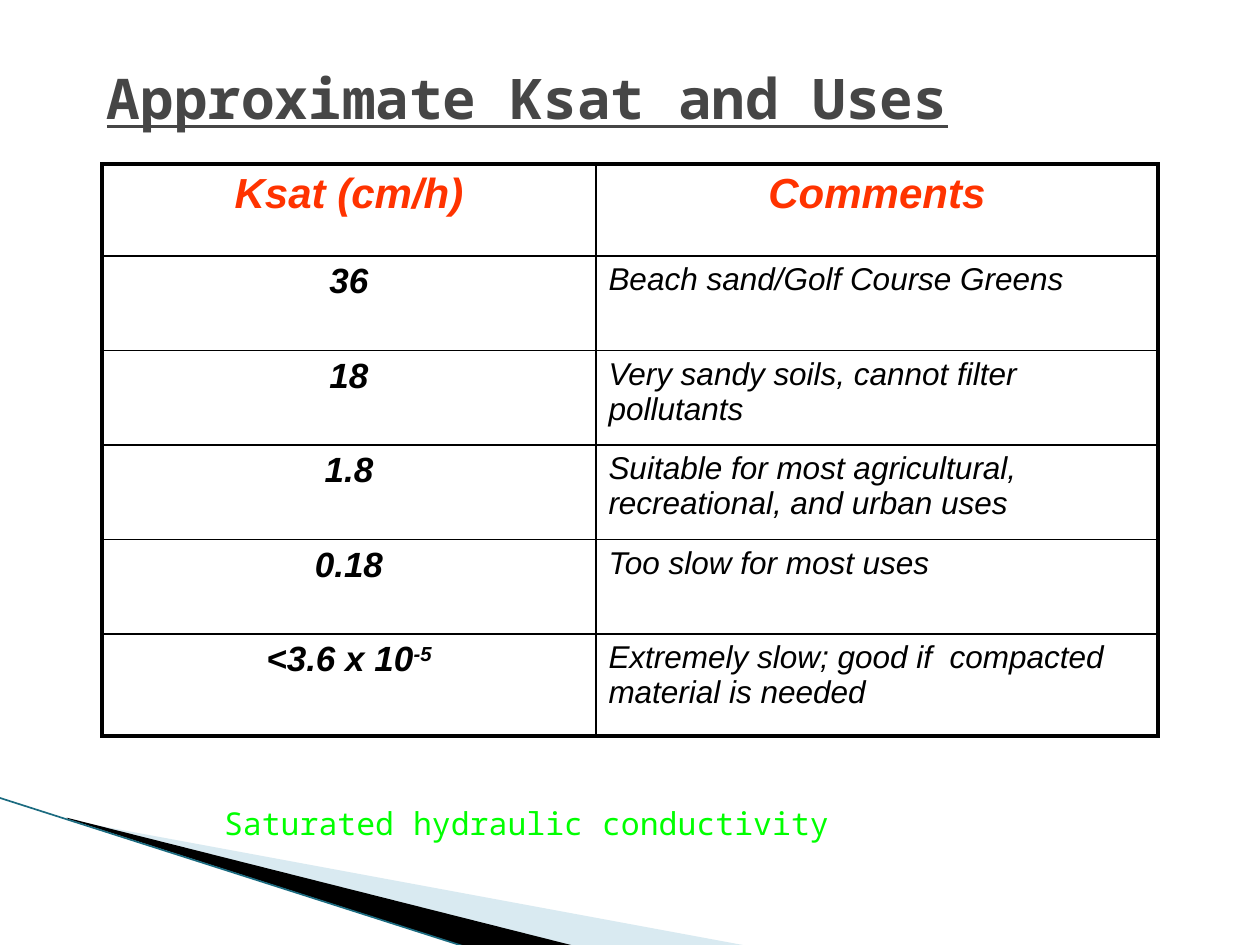
from lxml import etree
from pptx import Presentation
from pptx.dml.color import RGBColor
from pptx.enum.shapes import MSO_CONNECTOR
from pptx.enum.text import MSO_ANCHOR, PP_ALIGN
from pptx.oxml.ns import qn
from pptx.util import Inches, Pt

MONO, SANS = "Noto Sans Mono", "Arial"


def rgb(color):
    return RGBColor.from_string(color)


def add_run(p, text, size, font, color, bold=False, italic=False):
    r = p.add_run()
    r.text = text
    f = r.font
    f.size, f.name, f.bold, f.italic = Pt(size), font, bold, italic
    f.color.rgb = rgb(color)
    return r


prs = Presentation()
prs.slide_width, prs.slide_height = Inches(10), Inches(7.5)
s = prs.slides.add_slide(prs.slide_layouts[6])

# Corner wedges and their edge line
wedges = [
    ("A0CBDC", 40, [(0.55, 6.51), (5.95, 7.51), (4.56, 7.51), (0.55, 6.5)]),
    ("000000", 100, [(0.53, 6.49), (4.57, 7.51), (3.72, 7.52), (0.54, 6.5)]),
]
for color, opacity, corners in wedges:
    points = [(Inches(x), Inches(y)) for x, y in corners]
    fb = s.shapes.build_freeform(*points[0])
    fb.add_line_segments(points[1:], close=True)
    sp = fb.convert_to_shape()
    sp.shadow.inherit = False
    sp.line.fill.background()
    sp.fill.solid()
    sp.fill.fore_color.rgb = rgb(color)
    if opacity < 100:
        clr = sp.fill._xPr.find(f"{qn('a:solidFill')}/{qn('a:srgbClr')}")
        etree.SubElement(clr, qn("a:alpha"), val=str(opacity * 1000))

edge = s.shapes.add_connector(MSO_CONNECTOR.STRAIGHT, Inches(-0.01), Inches(6.33),
                              Inches(3.71), Inches(7.52))
edge.line.color.rgb = rgb("1B6B80")
edge.line.width = Pt(0.95)
etree.SubElement(edge._element.spPr, qn("a:effectLst"))

# Title
title = s.shapes.add_textbox(Inches(0.75), Inches(0.41), Inches(8.5), Inches(0.72))
tf = title.text_frame
tf.word_wrap = True
tf.vertical_anchor = MSO_ANCHOR.MIDDLE
r = add_run(tf.paragraphs[0], "Approximate Ksat and Uses", 32, MONO, "464646", bold=True)
r.font.underline = True

# Table: each row is conductivity, exponent, comment
rows = [
    ("Ksat (cm/h)", "", "Comments"),
    ("36", "", "Beach sand/Golf Course Greens"),
    ("18", "", "Very sandy soils, cannot filter pollutants"),
    ("1.8", "", "Suitable for most agricultural, recreational, and urban uses"),
    ("0.18", "", "Too slow for most uses"),
    ("<3.6 x 10", "-5", "Extremely slow; good if  compacted material is needed"),
]
col_widths = [3.92, 4.46]
row_heights = [0.73] + [0.75] * 4 + [0.81]
last_row, last_col = len(rows) - 1, len(col_widths) - 1
table = s.shapes.add_table(len(rows), len(col_widths), Inches(0.81), Inches(1.3),
                           Inches(sum(col_widths)), Inches(sum(row_heights))).table
for col, width in zip(table.columns, col_widths):
    col.width = Inches(width)
for row, height in zip(table.rows, row_heights):
    row.height = Inches(height)

for i, (ksat, exponent, comment) in enumerate(rows):
    for j, text in enumerate((ksat, comment)):
        cell = table.cell(i, j)
        p = cell.text_frame.paragraphs[0]
        header = i == 0
        p.alignment = PP_ALIGN.CENTER if header or j == 0 else PP_ALIGN.LEFT
        size = 24 if header else (20, 18)[j]
        style = (size, SANS, "FF3300" if header else "000000", header or j == 0, True)
        add_run(p, text, *style)
        if j == 0 and exponent:
            r = add_run(p, exponent, *style)
            r._r.get_or_add_rPr().set("baseline", "30000")

        # Heavy outer frame, thin inner rules; borders go before the fill
        tcPr = cell._tc.get_or_add_tcPr()
        outer = {"L": j == 0, "R": j == last_col, "T": i == 0, "B": i == last_row}
        for side, heavy in outer.items():
            ln = etree.SubElement(tcPr, qn(f"a:ln{side}"), w=str(Pt(2.25 if heavy else 1)))
            fill = etree.SubElement(ln, qn("a:solidFill"))
            etree.SubElement(fill, qn("a:srgbClr"), val="000000")
        cell.fill.background()

# Caption
caption = s.shapes.add_textbox(Inches(1.68), Inches(6.33), Inches(6.47), Inches(0.63))
tf = caption.text_frame
tf.word_wrap = True
add_run(tf.paragraphs[0], "Saturated hydraulic conductivity", 18, MONO, "00FF00")

prs.save("out.pptx")
